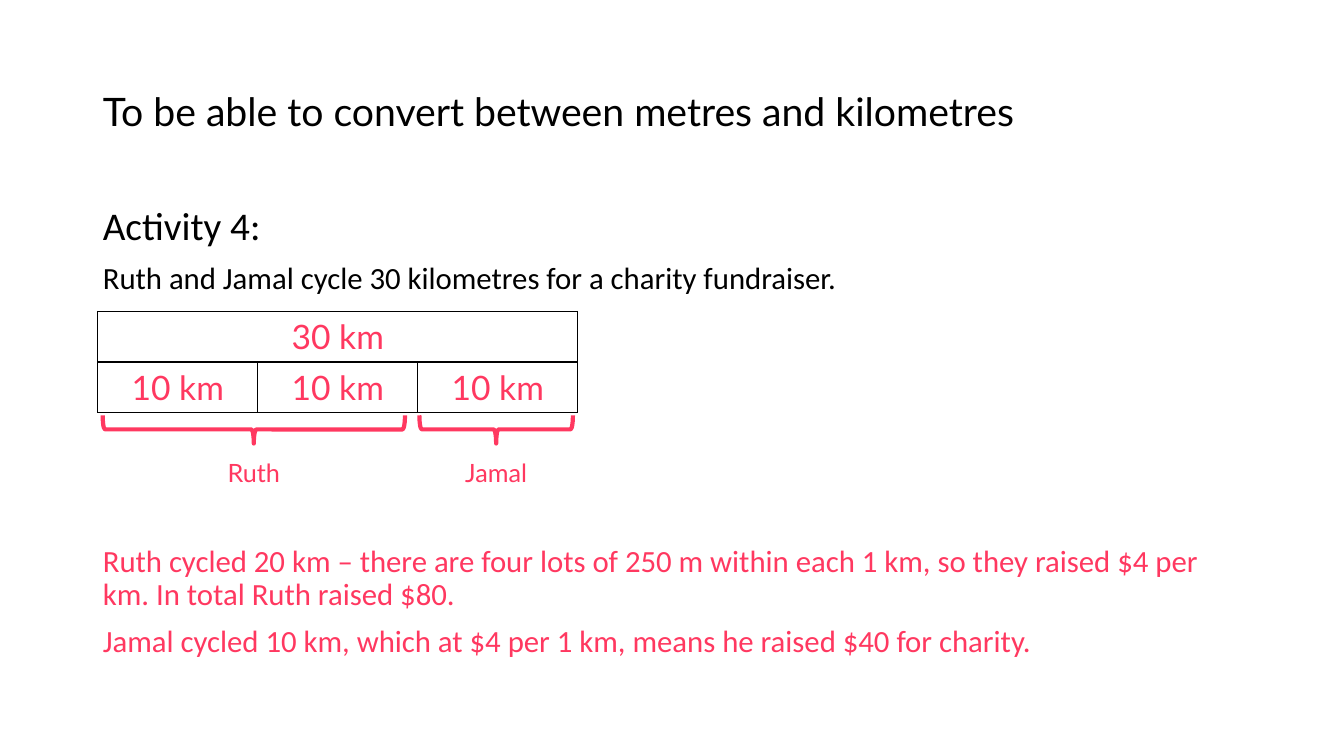
from dataclasses import dataclass

from lxml.etree import SubElement
from pptx import Presentation
from pptx.dml.color import RGBColor
from pptx.enum.shapes import MSO_SHAPE as Preset
from pptx.enum.text import MSO_ANCHOR as Anchor, MSO_AUTO_SIZE as AutoSize, PP_ALIGN as Align
from pptx.oxml.ns import qn
from pptx.util import Inches, Pt


@dataclass(frozen=True)
class Theme:
    black: str = "000000"
    white: str = "FFFFFF"
    answer: str = "FF3860"
    heading_font: str = "Lato"
    body_font: str = "Calibri"
    title_size: int = 28
    text_size: int = 22
    bar_size: int = 24
    label_size: int = 18
    border_width: int = 1
    brace_width: int = 3


@dataclass(frozen=True)
class Box:
    left: float
    top: float
    width: float
    height: float

    def emu(self):
        return [Inches(n) for n in (self.left, self.top, self.width, self.height)]


THEME = Theme()
SLIDE_WIDTH, SLIDE_HEIGHT = 13.33, 7.5


def write(paragraph, text, *, size, color=THEME.black, font=THEME.heading_font,
          align=Align.LEFT, spacing=None, before=0, bullet=True):
    if not bullet:
        properties = paragraph._p.get_or_add_pPr()
        properties.set("marL", "0")
        properties.set("indent", "0")
        SubElement(properties, qn("a:buNone"))
    paragraph.text = text
    paragraph.alignment = align
    paragraph.line_spacing = spacing
    paragraph.space_before = Pt(before)
    paragraph.font.size = Pt(size)
    paragraph.font.name = font
    paragraph.font.color.rgb = RGBColor.from_string(color)


def place(placeholder, box, anchor):
    placeholder.left, placeholder.top, placeholder.width, placeholder.height = box.emu()
    frame = placeholder.text_frame
    frame.word_wrap = True
    frame.auto_size = AutoSize.NONE
    frame.vertical_anchor = anchor
    return frame


def add_title(slide, box):
    frame = place(slide.shapes.title, box, Anchor.MIDDLE)
    write(frame.paragraphs[0], "To be able to convert between metres and kilometres",
          size=THEME.title_size, spacing=0.9)


def add_activity(slide, box, diagram_gap):
    """Write the question and its answers, leaving diagram_gap points between them."""
    frame = place(slide.placeholders[1], box, Anchor.TOP)
    lines = (
        ("Activity 4:", THEME.title_size, THEME.black, 0),
        ("Ruth and Jamal cycle 30 kilometres for a charity fundraiser.",
         THEME.text_size, THEME.black, 10),
        ("Ruth cycled 20 km – there are four lots of 250 m within each 1 km, "
         "so they raised $4 per km. In total Ruth raised $80.",
         THEME.text_size, THEME.answer, diagram_gap),
        ("Jamal cycled 10 km, which at $4 per 1 km, means he raised $40 for charity.",
         THEME.text_size, THEME.answer, 10),
    )
    for index, (text, size, color, before) in enumerate(lines):
        paragraph = frame.add_paragraph() if index else frame.paragraphs[0]
        write(paragraph, text, size=size, color=color, font=THEME.body_font,
              spacing=0.9, before=before, bullet=False)


def style_cell(cell):
    """Give a cell its border on all sides, then its fill."""
    properties = cell._tc.get_or_add_tcPr()
    for side in ("a:lnL", "a:lnR", "a:lnT", "a:lnB"):
        line = SubElement(properties, qn(side), w=str(Pt(THEME.border_width)))
        fill = SubElement(line, qn("a:solidFill"))
        SubElement(fill, qn("a:srgbClr"), val=THEME.black)
    cell.fill.solid()
    cell.fill.fore_color.rgb = RGBColor.from_string(THEME.white)


def add_bar_model(slide, box):
    rows = (("30 km",), ("10 km",) * 3)
    columns = len(rows[-1])
    table = slide.shapes.add_table(len(rows), columns, *box.emu()).table
    table.first_row = table.horz_banding = False
    for cell in table.iter_cells():
        style_cell(cell)
    table.cell(0, 0).merge(table.cell(0, columns - 1))
    for row, texts in enumerate(rows):
        for column, text in enumerate(texts):
            write(table.cell(row, column).text_frame.paragraphs[0], text,
                  size=THEME.bar_size, color=THEME.answer, align=Align.CENTER)

    column_width = box.width / columns
    for name, start, end in (("Ruth", 0.03, 1.92), ("Jamal", 2.01, 2.97)):
        add_braced_label(slide, name, Box(box.left + start * column_width,
                                          box.top + box.height + 0.03,
                                          (end - start) * column_width, 0.77))


def add_braced_label(slide, name, box):
    """Draw a brace along the top of the box and the name centred at its foot."""
    depth, label_height = 0.28, 0.4
    middle = box.left + box.width / 2
    upright = Box(middle - depth / 2, box.top + (depth - box.width) / 2, depth, box.width)
    brace = slide.shapes.add_shape(Preset.RIGHT_BRACE, *upright.emu())
    brace.rotation = 90
    brace.shadow.inherit = False
    brace.fill.background()
    brace.line.color.rgb = RGBColor.from_string(THEME.answer)
    brace.line.width = Pt(THEME.brace_width)

    label_box = Box(box.left, box.top + box.height - label_height, box.width, label_height)
    label = slide.shapes.add_textbox(*label_box.emu())
    label.text_frame.word_wrap = True
    write(label.text_frame.paragraphs[0], name, size=THEME.label_size,
          color=THEME.answer, align=Align.CENTER)


def main():
    presentation = Presentation()
    presentation.slide_width = Inches(SLIDE_WIDTH)
    presentation.slide_height = Inches(SLIDE_HEIGHT)
    slide = presentation.slides.add_slide(presentation.slide_layouts[1])
    margin = 0.92
    add_title(slide, Box(margin, 0.4, 9.6, 1.45))
    add_activity(slide, Box(margin, 2, SLIDE_WIDTH - 2 * margin, 4.76), diagram_gap=178)
    add_bar_model(slide, Box(margin + 0.05, 3.09, 4.76, 1))
    presentation.save("out.pptx")


if __name__ == "__main__":
    main()
